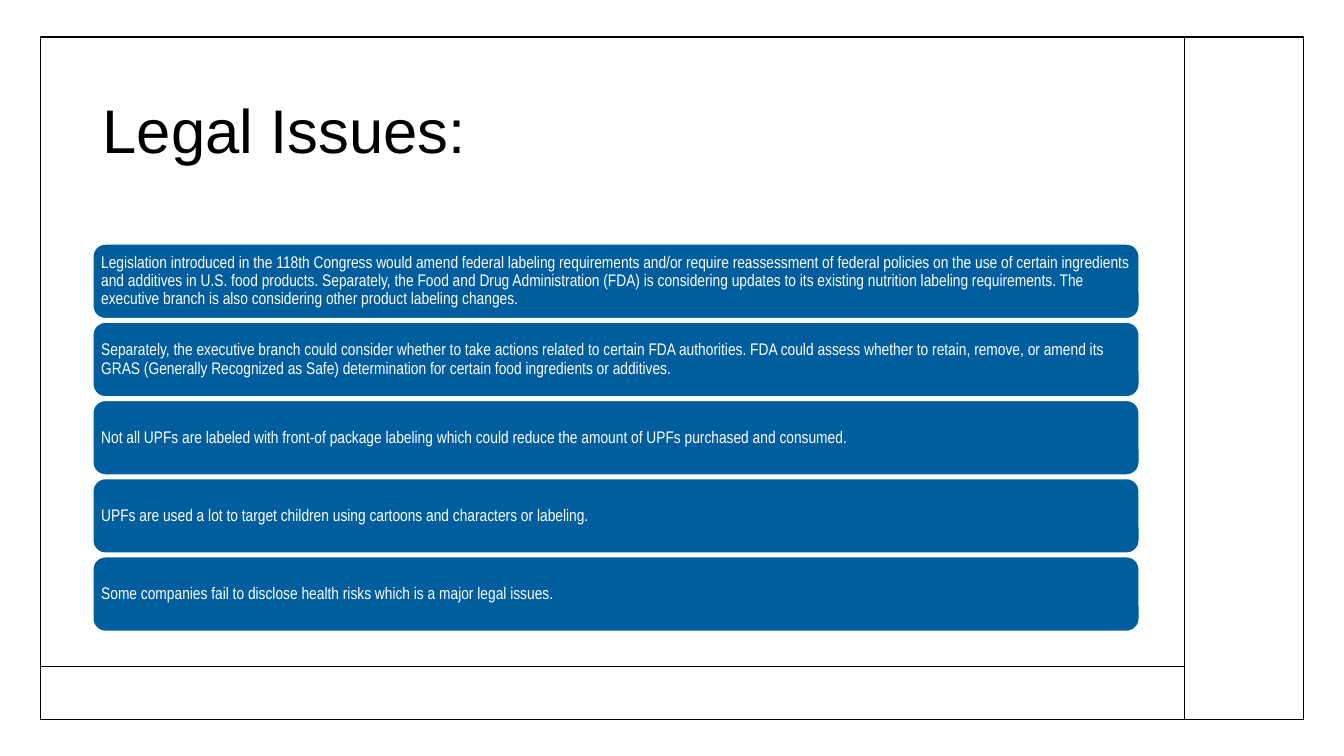
"""Build the "Legal Issues" slide with a ruled frame and five statement bars."""
from lxml import etree
from pptx import Presentation
from pptx import util as u
from pptx.dml.color import RGBColor
from pptx.enum import shapes, text
from pptx.oxml.ns import qn

COLOURS = {"ink": "000000", "bar": "005E9E", "paper": "FFFFFF"}
FRAME_LEFT, FRAME_TOP, FRAME_WIDTH, FRAME_HEIGHT = 1.02, 0.93, 31.83, 17.2
DIVIDER_X, FOOTER_Y = 29.85, 16.79
CONTENT_LEFT, CONTENT_WIDTH = 2.34, 26.37
BAR_TOP, BAR_HEIGHT, BAR_PITCH = 6.15, 1.88, 1.97

ISSUES = [
    "Legislation introduced in the 118th Congress would amend federal labeling "
    "requirements and/or require reassessment of federal policies on the use of certain "
    "ingredients and additives in U.S. food products. Separately, the Food and Drug "
    "Administration (FDA) is considering updates to its existing nutrition labeling "
    "requirements. The executive branch is also considering other product labeling changes.",
    "Separately, the executive branch could consider whether to take actions related to "
    "certain FDA authorities. FDA could assess whether to retain, remove, or amend its GRAS "
    "(Generally Recognized as Safe) determination for certain food ingredients or additives.",
    "Not all UPFs are labeled with front-of package labeling which could reduce the amount "
    "of UPFs purchased and consumed.",
    "UPFs are used a lot to target children using cartoons and characters or labeling.",
    "Some companies fail to disclose health risks which is a major legal issues.",
]


def colour(name):
    """Return the named palette colour."""
    return RGBColor.from_string(COLOURS[name])


def set_line(line, name):
    """Give an outline one point of the named colour."""
    line.color.rgb = colour(name)
    line.width = u.Pt(1)


def write_text(box, words, font, size, name):
    """Write one left-aligned, vertically centred paragraph."""
    frame = box.text_frame
    frame.word_wrap = True
    frame.vertical_anchor = text.MSO_ANCHOR.MIDDLE
    para = frame.paragraphs[0]
    para.alignment = text.PP_ALIGN.LEFT
    para.line_spacing = 0.9
    span = para.add_run()
    span.text = words
    span.font.name = font
    span.font.size = u.Pt(size)
    span.font.color.rgb = colour(name)


def add_frame(page):
    """Add the outlined frame around the page."""
    box = page.shapes.add_shape(
        shapes.MSO_SHAPE.RECTANGLE,
        u.Cm(FRAME_LEFT), u.Cm(FRAME_TOP), u.Cm(FRAME_WIDTH), u.Cm(FRAME_HEIGHT))
    box.shadow.inherit = False
    box.fill.background()
    set_line(box.line, "ink")


def add_rule(page, start_x, start_y, end_x, end_y):
    """Add a straight rule without a shadow."""
    rule = page.shapes.add_connector(
        shapes.MSO_CONNECTOR.STRAIGHT,
        u.Cm(start_x), u.Cm(start_y), u.Cm(end_x), u.Cm(end_y))
    set_line(rule.line, "ink")
    etree.SubElement(rule._element.spPr, qn("a:effectLst"))


def add_title(page, words):
    """Add the slide title."""
    box = page.shapes.add_textbox(
        u.Cm(CONTENT_LEFT), u.Cm(1.52), u.Cm(CONTENT_WIDTH), u.Cm(3.68))
    write_text(box, words, "Arial", 44, "ink")


def add_bar(page, top, words):
    """Add a rounded bar holding one statement."""
    bar = page.shapes.add_shape(
        shapes.MSO_SHAPE.ROUNDED_RECTANGLE,
        u.Cm(CONTENT_LEFT), u.Cm(top), u.Cm(CONTENT_WIDTH), u.Cm(BAR_HEIGHT))
    bar.shadow.inherit = False
    bar.fill.solid()
    bar.fill.fore_color.rgb = colour("bar")
    set_line(bar.line, "paper")
    frame = bar.text_frame
    frame.margin_left = frame.margin_right = u.Cm(0.12)
    frame.margin_top = frame.margin_bottom = u.Cm(0.12)
    write_text(bar, words, "Arial Narrow", 12, "paper")


def main():
    """Build and save the deck."""
    deck = Presentation()
    deck.slide_width, deck.slide_height = u.Cm(33.87), u.Cm(19.05)
    page = deck.slides.add_slide(deck.slide_layouts[6])
    add_frame(page)
    add_rule(page, DIVIDER_X, FRAME_TOP, DIVIDER_X, FRAME_TOP + FRAME_HEIGHT)
    add_rule(page, FRAME_LEFT, FOOTER_Y, DIVIDER_X, FOOTER_Y)
    add_title(page, "Legal Issues:")
    for index, issue in enumerate(ISSUES):
        add_bar(page, BAR_TOP + index * BAR_PITCH, issue)
    deck.save("out.pptx")


if __name__ == "__main__":
    main()
